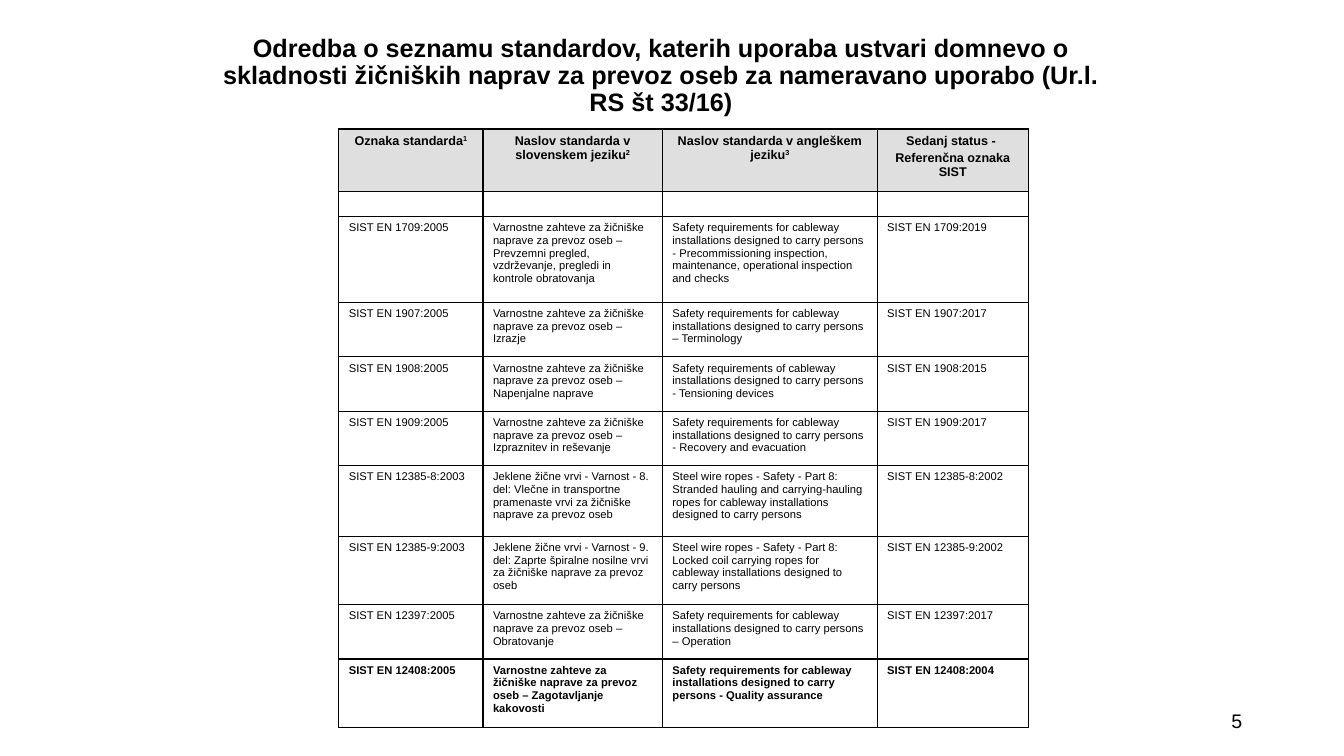
from lxml import etree
from pptx import Presentation
from pptx.dml.color import RGBColor
from pptx.enum.text import MSO_ANCHOR, PP_ALIGN
from pptx.oxml.ns import qn
from pptx.util import Inches, Pt

CENTER, LEFT, RIGHT = PP_ALIGN.CENTER, PP_ALIGN.LEFT, PP_ALIGN.RIGHT
MIDDLE = MSO_ANCHOR.MIDDLE
FONT = "Arial"
BLACK, WHITE, GRAY = "000000", "FFFFFF", "DFDFDF"

TITLE = ("Odredba o seznamu standardov, katerih uporaba ustvari domnevo o skladnosti "
         "žičniških naprav za prevoz oseb za nameravano uporabo (Ur.l. RS št 33/16)")
PAGE_NUMBER = "5"
HEADERS = [
    ([("Oznaka standarda"), ], "1"),
    (["Naslov standarda v slovenskem jeziku"], "2"),
    (["Naslov standarda v angleškem jeziku"], "3"),
    (["Sedanj status - ", "Referenčna oznaka SIST"], ""),
]
SLOVENE = "Varnostne zahteve za žičniške naprave za prevoz oseb – "
ENGLISH = "Safety requirements for cableway installations designed to carry persons "
STANDARDS = [
    ("", "", "", ""),
    ("SIST EN 1709:2005",
     SLOVENE + "Prevzemni pregled, vzdrževanje, pregledi in kontrole obratovanja",
     ENGLISH + "- Precommissioning inspection, maintenance, operational inspection and checks",
     "SIST EN 1709:2019"),
    ("SIST EN 1907:2005", SLOVENE + "Izrazje", ENGLISH + "– Terminology",
     "SIST EN 1907:2017"),
    ("SIST EN 1908:2005", SLOVENE + "Napenjalne naprave",
     "Safety requirements of cableway installations designed to carry persons - Tensioning devices",
     "SIST EN 1908:2015"),
    ("SIST EN 1909:2005", SLOVENE + "Izpraznitev in reševanje",
     ENGLISH + "- Recovery and evacuation", "SIST EN 1909:2017"),
    ("SIST EN 12385-8:2003",
     "Jeklene žične vrvi - Varnost - 8. del: Vlečne in transportne pramenaste vrvi "
     "za žičniške naprave za prevoz oseb",
     "Steel wire ropes - Safety - Part 8: Stranded hauling and carrying-hauling ropes "
     "for cableway installations designed to carry persons",
     "SIST EN 12385-8:2002"),
    ("SIST EN 12385-9:2003",
     "Jeklene žične vrvi - Varnost - 9. del: Zaprte špiralne nosilne vrvi "
     "za žičniške naprave za prevoz oseb",
     "Steel wire ropes - Safety - Part 8: Locked coil carrying ropes "
     "for cableway installations designed to carry persons",
     "SIST EN 12385-9:2002"),
    ("SIST EN 12397:2005", SLOVENE + "Obratovanje", ENGLISH + "– Operation",
     "SIST EN 12397:2017"),
    ("SIST EN 12408:2005", SLOVENE + "Zagotavljanje kakovosti",
     ENGLISH + "- Quality assurance", "SIST EN 12408:2004"),
]
COLUMN_WIDTHS = [1.43, 1.78, 2.13, 1.5]
ROW_HEIGHTS = [0.62, 0.25, 0.85, 0.54, 0.54, 0.54, 0.7, 0.68, 0.54, 0.68]
TABLE_LEFT, TABLE_TOP = 3.36, 1.28

TITLE_FORMAT = {"size": Pt(18), "bold": True, "name": FONT}
HEADER_FORMAT = {"size": Pt(9), "bold": True, "name": FONT}
BODY_FORMAT = {"size": Pt(8), "bold": False, "name": FONT}
LAST_FORMAT = {**BODY_FORMAT, "bold": True}
NUMBER_FORMAT = {"size": Pt(14), "name": FONT}


def color(value):
    return RGBColor.from_string(value)


def add_run(paragraph, text, font_format):
    run = paragraph.add_run()
    run.text = text
    for name, value in font_format.items():
        setattr(run.font, name, value)
    run.font.color.rgb = color(BLACK)
    return run


def write_lines(frame, lines, font_format, alignment):
    for index, line in enumerate(lines):
        paragraph = frame.add_paragraph() if index else frame.paragraphs[0]
        paragraph.alignment = alignment
        if index:
            paragraph.space_before = Pt(1.8)
        if line:
            add_run(paragraph, line, font_format)
        else:
            etree.SubElement(paragraph._p, qn("a:endParaRPr"), sz="800")
    return paragraph


def add_text(slide, box, text, font_format, alignment):
    shape = slide.shapes.add_textbox(*map(Inches, box))
    frame = shape.text_frame
    frame.word_wrap = True
    frame.vertical_anchor = MIDDLE
    return write_lines(frame, [text], font_format, alignment)


def style_cell(cell, fill):
    properties = cell._tc.get_or_add_tcPr()
    for side in ("lnL", "lnR", "lnT", "lnB"):
        line = etree.SubElement(properties, qn("a:" + side), w=str(Pt(1)))
        solid = etree.SubElement(line, qn("a:solidFill"))
        etree.SubElement(solid, qn("a:srgbClr"), val=BLACK)
    cell.fill.solid()
    cell.fill.fore_color.rgb = color(fill)


def add_standards_table(slide):
    frame = slide.shapes.add_table(
        len(ROW_HEIGHTS), len(COLUMN_WIDTHS), Inches(TABLE_LEFT), Inches(TABLE_TOP),
        Inches(sum(COLUMN_WIDTHS)), Inches(sum(ROW_HEIGHTS)))
    table = frame.table
    table.horz_banding = False
    for column, width in zip(table.columns, COLUMN_WIDTHS):
        column.width = Inches(width)
    for row, height in zip(table.rows, ROW_HEIGHTS):
        row.height = Inches(height)

    for cell, (lines, note) in zip(table.rows[0].cells, HEADERS):
        style_cell(cell, GRAY)
        paragraph = write_lines(cell.text_frame, lines, HEADER_FORMAT, CENTER)
        if note:
            run = add_run(paragraph, note, HEADER_FORMAT)
            run._r.get_or_add_rPr().set("baseline", "30000")

    for row_index, standard in enumerate(STANDARDS, 1):
        font_format = LAST_FORMAT if row_index == len(STANDARDS) else BODY_FORMAT
        for cell, text in zip(table.rows[row_index].cells, standard):
            style_cell(cell, WHITE)
            write_lines(cell.text_frame, [text], font_format, LEFT)


def main():
    presentation = Presentation()
    presentation.slide_width = Inches(13.33)
    presentation.slide_height = Inches(7.5)
    slide = presentation.slides.add_slide(presentation.slide_layouts[6])
    title = add_text(slide, (1.94, 0.13, 9.23, 1.25), TITLE, TITLE_FORMAT, CENTER)
    title.line_spacing = 0.9
    add_standards_table(slide)
    add_text(slide, (9.42, 6.95, 3, 0.4), PAGE_NUMBER, NUMBER_FORMAT, RIGHT)
    presentation.save("out.pptx")


if __name__ == "__main__":
    main()
